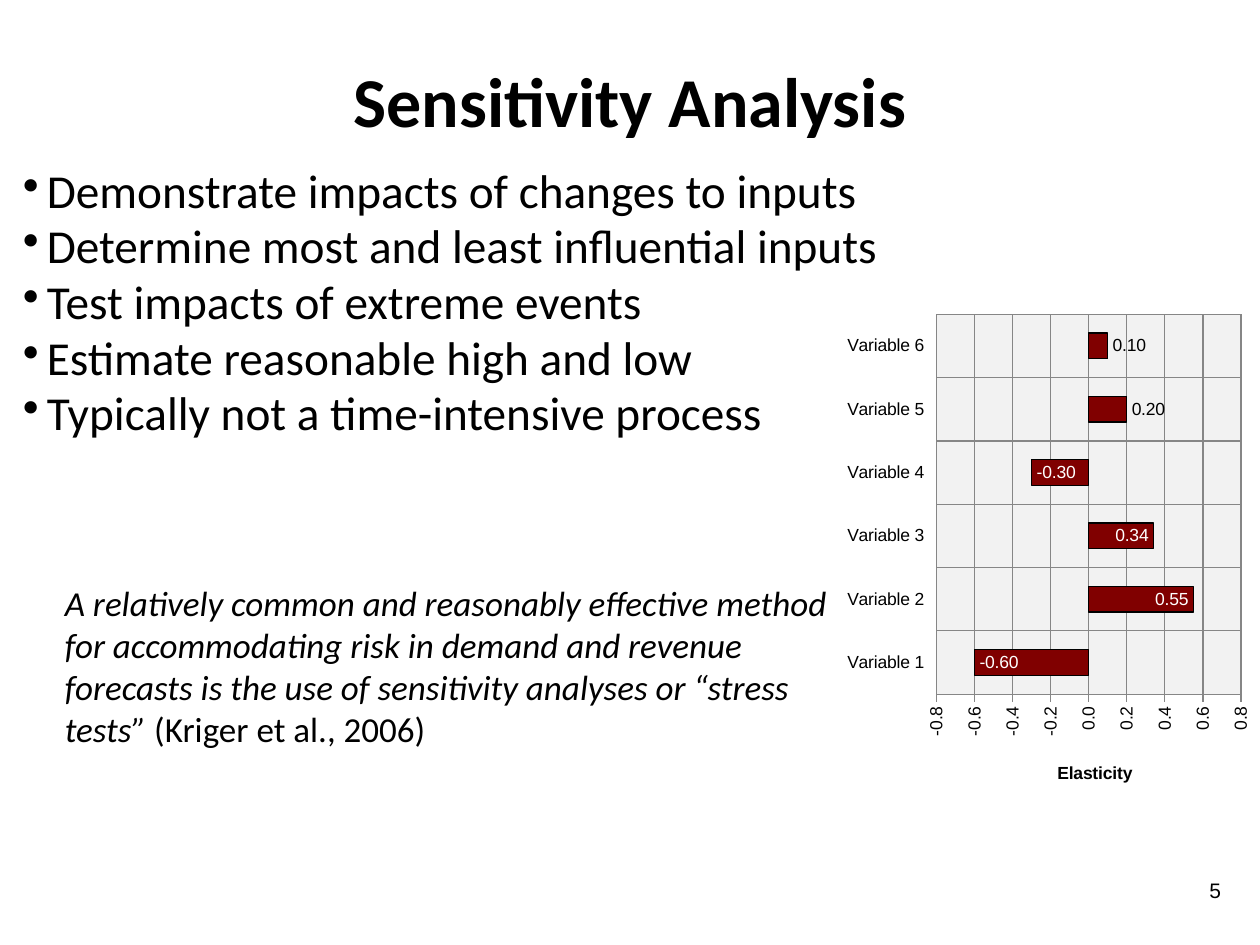
from lxml import etree
from pptx import Presentation
from pptx.chart.data import CategoryChartData
from pptx.dml.color import RGBColor
from pptx.enum.chart import XL_CHART_TYPE, XL_LABEL_POSITION, XL_TICK_LABEL_POSITION, XL_TICK_MARK
from pptx.enum.text import MSO_ANCHOR, PP_ALIGN
from pptx.oxml.ns import qn
from pptx.util import Inches, Pt

BAR_CLUSTERED = XL_CHART_TYPE.BAR_CLUSTERED
INSIDE_END = XL_LABEL_POSITION.INSIDE_END
OUTSIDE_END = XL_LABEL_POSITION.OUTSIDE_END
LOW = XL_TICK_LABEL_POSITION.LOW
CROSS = XL_TICK_MARK.CROSS
MIDDLE = MSO_ANCHOR.MIDDLE
TOP = MSO_ANCHOR.TOP
CENTER = PP_ALIGN.CENTER
LEFT = PP_ALIGN.LEFT

BLACK = RGBColor(0, 0, 0)
WHITE = RGBColor(255, 255, 255)
MAROON = RGBColor(0x80, 0, 0)
GRID_GRAY = RGBColor(0x86, 0x86, 0x86)
PLOT_GRAY = RGBColor(0xF2, 0xF2, 0xF2)

SLIDE_WIDTH, SLIDE_HEIGHT = Inches(10), Inches(7.5)
COLUMNS, ROWS = 120, 90
BULLET_INDENT = Inches(0.19)

BULLETS = [
    "Demonstrate impacts of changes to inputs",
    "Determine most and least influential inputs",
    "Test impacts of extreme events",
    "Estimate reasonable high and low",
    "Typically not a time-intensive process",
]
QUOTE = [
    "A relatively common and reasonably effective method for accommodating risk in demand and revenue",
    "forecasts is the use of sensitivity analyses or “stress tests” ",
]
CITATION = "(Kriger et al., 2006)"
ELASTICITIES = [-0.6, 0.55, 0.34, -0.3, 0.2, 0.1]
SHORT_BARS = [4, 5]


def grid_box(column, row, columns, rows):
    cell_width, cell_height = SLIDE_WIDTH / COLUMNS, SLIDE_HEIGHT / ROWS
    return (int(column * cell_width), int(row * cell_height),
            int(columns * cell_width), int(rows * cell_height))


def style_font(font, size, color=BLACK, name="Arial", bold=False):
    font.name = name
    font.size = Pt(size)
    font.bold = bold
    font.color.rgb = color


def add_text(slide, box, lines, size, name="Calibri", bold=False, align=LEFT, anchor=TOP):
    frame = slide.shapes.add_textbox(*box).text_frame
    frame.word_wrap = True
    frame.vertical_anchor = anchor
    frame.text = "\n".join(lines)
    for paragraph in frame.paragraphs:
        paragraph.alignment = align
        style_font(paragraph.font, size, name=name, bold=bold)
    return frame.paragraphs


def add_bullets(slide, box, lines, size):
    for paragraph in add_text(slide, box, lines, size):
        properties = paragraph._p.get_or_add_pPr()
        properties.set("marL", str(BULLET_INDENT))
        properties.set("indent", str(-BULLET_INDENT))
        bullet = etree.Element(qn("a:buChar"), char="•")
        properties.insert(0, bullet)
        paragraph.line_spacing = 0.98


def add_quote(slide, box, lines, citation, size):
    paragraphs = add_text(slide, box, lines, size)
    for paragraph in paragraphs:
        paragraph.font.italic = True
    run = paragraphs[-1].add_run()
    run.text = citation
    run.font.italic = False


def manual_layout(**shares):
    layout = etree.Element(qn("c:layout"))
    manual = etree.SubElement(layout, qn("c:manualLayout"))
    if "w" in shares:
        etree.SubElement(manual, qn("c:layoutTarget"), val="inner")
    for key in ("x", "y"):
        etree.SubElement(manual, qn(f"c:{key}Mode"), val="edge")
    for key, share in shares.items():
        etree.SubElement(manual, qn(f"c:{key}"), val=str(share))
    return layout


def style_plot_area(chart):
    area = chart._chartSpace.chart.plotArea
    for layout in area.findall(qn("c:layout")):
        area.remove(layout)
    area.insert(0, manual_layout(x=0.23, y=0.02, w=0.725, h=0.77))
    properties = etree.SubElement(area, qn("c:spPr"))
    fill = etree.SubElement(properties, qn("a:solidFill"))
    etree.SubElement(fill, qn("a:srgbClr"), val=str(PLOT_GRAY))


def style_axis(axis):
    axis.has_major_gridlines = True
    axis.major_tick_mark = CROSS
    axis.tick_label_position = LOW
    style_font(axis.tick_labels.font, 10)
    for line in (axis.format.line, axis.major_gridlines.format.line):
        line.color.rgb = GRID_GRAY
        line.width = Pt(0.75)


def style_value_axis(axis):
    style_axis(axis)
    axis.minimum_scale, axis.maximum_scale, axis.major_unit = -0.8, 0.8, 0.2
    axis.tick_labels.number_format = "0.0"
    axis.tick_labels.number_format_is_linked = False
    axis._element.find(qn("c:txPr")).find(qn("a:bodyPr")).set("rot", "-5400000")
    axis.axis_title.text_frame.text = "Elasticity"
    style_font(axis.axis_title.text_frame.paragraphs[0].font, 10, bold=True)
    title = axis.axis_title._element
    for layout in title.findall(qn("c:layout")):
        title.remove(layout)
    title.find(qn("c:tx")).addnext(manual_layout(x=0.51, y=0.92))


def style_bars(plot):
    plot.gap_width = 147
    plot.overlap = 57
    plot.vary_by_categories = False
    series = plot.series[0]
    series.invert_if_negative = False
    series.format.fill.solid()
    series.format.fill.fore_color.rgb = MAROON
    series.format.line.color.rgb = BLACK
    series.format.line.width = Pt(0.75)
    labels = series.data_labels
    labels.show_value = True
    labels.position = INSIDE_END
    labels.number_format = "#,##0.00"
    labels.number_format_is_linked = False
    style_font(labels.font, 10, WHITE)
    for index in SHORT_BARS:
        label = series.points[index].data_label
        style_font(label.font, 10)
        label.position = OUTSIDE_END


def add_elasticity_chart(slide, box):
    data = CategoryChartData(number_format="#,##0.00")
    data.categories = [f"Variable {number}" for number in range(1, len(ELASTICITIES) + 1)]
    data.add_series("Series 1", ELASTICITIES)
    chart = slide.shapes.add_chart(BAR_CLUSTERED, *box, data).chart
    chart.has_legend = False
    chart.has_title = False
    style_font(chart.font, 10)
    style_axis(chart.category_axis)
    style_value_axis(chart.value_axis)
    style_bars(chart.plots[0])
    style_plot_area(chart)


def main():
    presentation = Presentation()
    presentation.slide_width, presentation.slide_height = SLIDE_WIDTH, SLIDE_HEIGHT
    slide = presentation.slides.add_slide(presentation.slide_layouts[6])
    add_text(slide, grid_box(0, 0, 120, 19), ["Sensitivity Analysis"], 40,
             bold=True, align=CENTER, anchor=MIDDLE)
    add_quote(slide, grid_box(5, 54.75, 78, 17), QUOTE, CITATION, 20)
    add_bullets(slide, grid_box(1, 15, 86, 40), BULLETS, 27)
    add_elasticity_chart(slide, grid_box(80, 29, 40, 47))
    add_text(slide, grid_box(114, 83, 4, 3.6), ["5"], 12, name="Arial")
    presentation.save("out.pptx")


if __name__ == "__main__":
    main()
